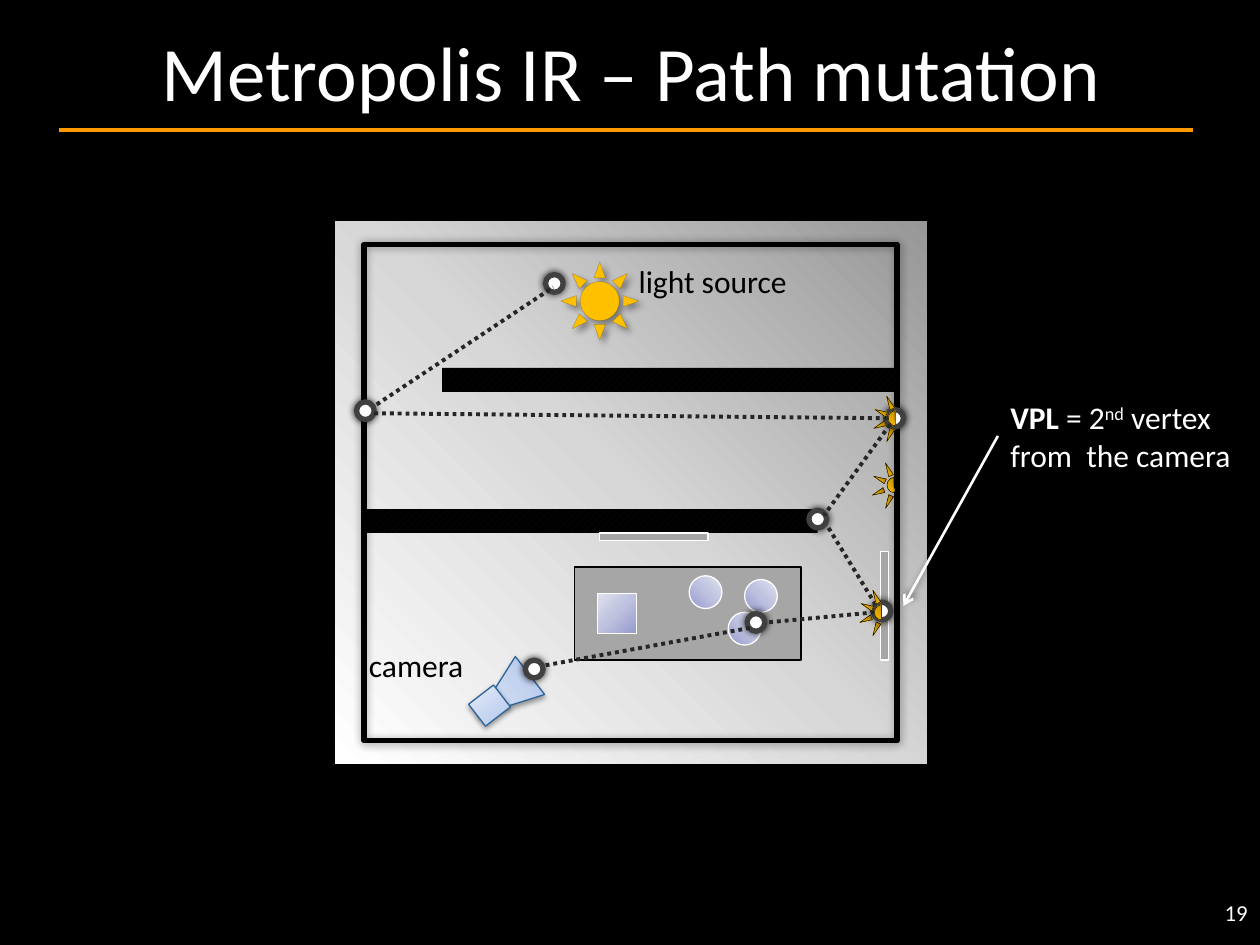
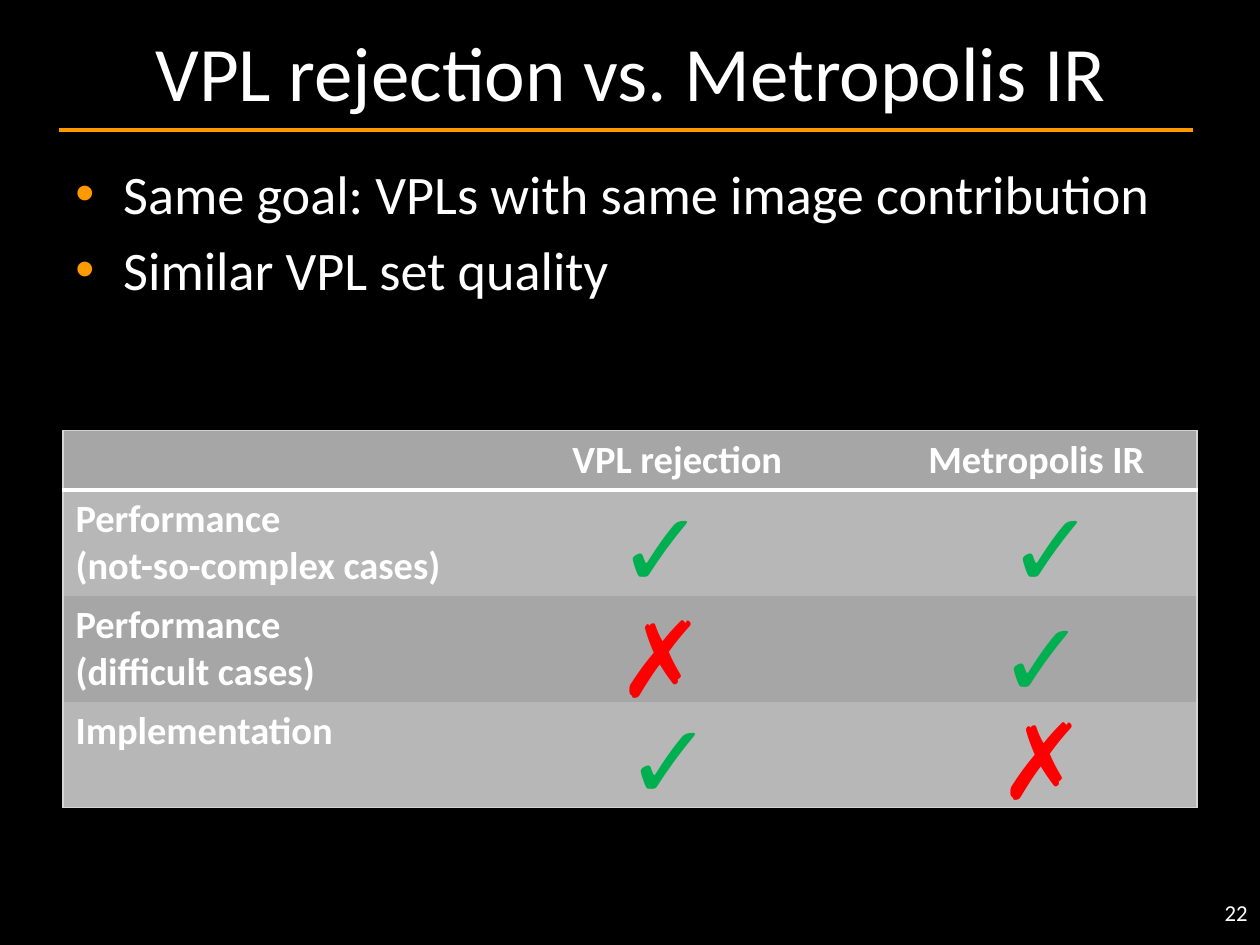
from dataclasses import dataclass
from typing import Optional

from lxml import etree
from pptx import Presentation
from pptx.dml.color import RGBColor
from pptx.enum.dml import MSO_LINE, MSO_PATTERN
from pptx.enum.shapes import MSO_CONNECTOR, MSO_SHAPE
from pptx.enum.text import MSO_ANCHOR, PP_ALIGN
from pptx.oxml.ns import qn
from pptx.util import Inches, Pt

BLACK, WHITE, ORANGE = "000000", "FFFFFF", "FF9900"
DARK, GREY, EDGE, BAND = "262626", "A6A6A6", "D5D5D5", "B7B7B7"
GREEN, RED = "00B050", "FF0000"


@dataclass
class Gradient:
    stops: tuple
    angle: int = 0
    focus: Optional[tuple] = None


@dataclass
class Shadow:
    alpha: int
    blur: float
    dist: float = 0
    angle: int = 0


LILAC = ((0, "959ACF"), (50, "BFC2DF"), (100, "E0E1EF"))
ROOM = Gradient(((0, "979797"), (50, "D7D7D7"), (100, WHITE)), 135)
CAMERA = Gradient(((0, "A9C0E9"), (35, "C4D3EF"), (100, "E8EEFA")), 270)
BALL = Gradient(LILAC, 315)
BOX = Gradient(LILAC, focus=(100, 100, 0, 0))
GLOW = Gradient(((0, "977200"), (50, "D7A200"), (100, "FFC000")), focus=(100, 0, 0, 100))


def rgb(color):
    return RGBColor.from_string(color)


def add(parent, tag, **attrs):
    return etree.SubElement(parent, qn(tag), {k: str(v) for k, v in attrs.items()})


def add_color(parent, color, alpha=100):
    clr = add(parent, "a:srgbClr", val=color)
    if alpha < 100:
        add(clr, "a:alpha", val=alpha * 1000)


def paint(sp, fill):
    if fill is None:
        sp.fill.background()
    elif isinstance(fill, str):
        sp.fill.solid()
        sp.fill.fore_color.rgb = rgb(fill)
    elif isinstance(fill, tuple):
        sp.fill.patterned()
        sp.fill.pattern = MSO_PATTERN.WIDE_UPWARD_DIAGONAL
        sp.fill.fore_color.rgb, sp.fill.back_color.rgb = map(rgb, fill)
    else:
        sp.fill.gradient()
        grad = sp._element.spPr.find(qn("a:gradFill"))
        for child in list(grad):
            grad.remove(child)
        stops = add(grad, "a:gsLst")
        for pos, color in fill.stops:
            add_color(add(stops, "a:gs", pos=pos * 1000), color)
        if fill.focus:
            way = add(grad, "a:path", path="circle")
            add(way, "a:fillToRect", **{k: v * 1000 for k, v in zip("ltrb", fill.focus)})
        else:
            add(grad, "a:lin", ang=fill.angle * 60000, scaled=0)


def cast(effects, shadow):
    if shadow:
        outer = add(effects, "a:outerShdw", blurRad=Pt(shadow.blur), dist=Pt(shadow.dist),
                    dir=shadow.angle * 60000, algn="ctr", rotWithShape=0)
        add_color(outer, BLACK, shadow.alpha)


def write(p, text, size=18, color=WHITE, font="Calibri", bold=False, base=0, align=None):
    if align is not None:
        p.alignment = align
    for i, line in enumerate(text.split("\n")):
        if i:
            p.add_line_break()
        r = p.add_run()
        r.text = line
        r.font.name, r.font.size, r.font.bold = font, Pt(size), bold
        r.font.color.rgb = rgb(color)
        if base:
            r.font._element.set("baseline", str(base * 1000))


def set_borders(cell, sides):
    tcPr = cell._tc.get_or_add_tcPr()
    for i, side in enumerate("LRTB"):
        color, width = sides.get(side, (None, 0))
        ln = etree.Element(qn(f"a:ln{side}"), w=str(Pt(width)))
        if color:
            add_color(add(ln, "a:solidFill"), color)
        else:
            add(ln, "a:noFill")
        tcPr.insert(i, ln)


class Deck:
    def __init__(self):
        self.prs = Presentation()
        self.prs.slide_width, self.prs.slide_height = Inches(10), Inches(7.5)
        fill = self.prs.slide_master.background.fill
        fill.solid()
        fill.fore_color.rgb = rgb(BLACK)

    def slide(self, title, number):
        self.s = self.prs.slides.add_slide(self.prs.slide_layouts[5])
        self.line((0.47, 1.03), (9.47, 1.03), ORANGE)
        sp = self.s.shapes.title
        sp.left, sp.top, sp.width, sp.height = map(Inches, (0.56, 0.09, 8.9, 0.94))
        sp.text_frame.vertical_anchor = MSO_ANCHOR.MIDDLE
        write(sp.text_frame.paragraphs[0], title, size=44, align=PP_ALIGN.CENTER)
        self.text(number, 7.67, 7.08, 2.33, 0.42, wrap=True, size=13, align=PP_ALIGN.RIGHT)

    def shape(self, kind, x, y, w, h, fill=None, line=BLACK, width=0.75, rot=0,
              shadow=None, line_alpha=100):
        sp = self.s.shapes.add_shape(kind, *map(Inches, (x, y, w, h)))
        sp.rotation = rot
        paint(sp, fill)
        sp.line.color.rgb, sp.line.width = rgb(line), Pt(width)
        if line_alpha < 100:
            add(sp.line._ln.find(".//" + qn("a:srgbClr")), "a:alpha", val=line_alpha * 1000)
        sp.shadow.inherit = False
        cast(sp._element.spPr.find(qn("a:effectLst")), shadow)
        return sp

    def line(self, start, end, color=DARK, width=2.25, dash=None, arrow=False, shadow=None):
        cx = self.s.shapes.add_connector(MSO_CONNECTOR.STRAIGHT, *map(Inches, start + end))
        cx.line.color.rgb, cx.line.width = rgb(color), Pt(width)
        if dash:
            cx.line.dash_style = dash
        if arrow:
            add(cx.line._ln, "a:tailEnd", type="arrow")
        cast(add(cx._element.spPr, "a:effectLst"), shadow)

    def text(self, runs, x, y, w, h, wrap=False, **fmt):
        tf = self.s.shapes.add_textbox(*map(Inches, (x, y, w, h))).text_frame
        tf.word_wrap = wrap
        for text, extra in [(runs, {})] if isinstance(runs, str) else runs:
            write(tf.paragraphs[0], text, **fmt, **extra)

    def bullets(self, items, x, y, w, h, size):
        tf = self.s.shapes.add_textbox(*map(Inches, (x, y, w, h))).text_frame
        tf.word_wrap = True
        for i, item in enumerate(items):
            p = tf.add_paragraph() if i else tf.paragraphs[0]
            p.space_before = Pt(size * 0.2)
            pPr = p._p.get_or_add_pPr()
            pPr.set("marL", str(Inches(0.38)))
            pPr.set("indent", str(-Inches(0.38)))
            add_color(add(pPr, "a:buClr"), ORANGE)
            add(pPr, "a:buFont", typeface="Arial")
            add(pPr, "a:buChar", char="•")
            write(p, item, size=size)

    def table(self, rows, x, y, widths, heights):
        frame = self.s.shapes.add_table(len(rows), len(widths), Inches(x), Inches(y),
                                        Inches(sum(widths)), Inches(sum(heights)))
        table = frame.table
        table.horz_banding = False
        for col, width in zip(table.columns, widths):
            col.width = Inches(width)
        for i, (row, height) in enumerate(zip(rows, heights)):
            table.rows[i].height = Inches(height)
            for j, text in enumerate(row):
                cell = table.cell(i, j)
                cell.fill.solid()
                cell.fill.fore_color.rgb = rgb(BAND if i % 2 else GREY)
                outer = {"L": j == 0, "R": j == len(widths) - 1,
                         "T": i == 0, "B": i == len(rows) - 1}
                sides = {side: (EDGE, 0.75) for side, on in outer.items() if on}
                if i < 2:
                    sides["T" if i else "B"] = (WHITE, 3)
                set_borders(cell, sides)
                if text:
                    write(cell.text_frame.paragraphs[0], text, size=22, bold=True,
                          align=PP_ALIGN.LEFT if i else PP_ALIGN.CENTER)

    def vertex(self, x, y):
        self.shape(MSO_SHAPE.OVAL, x, y, 0.14, 0.14, WHITE, "404040", 3,
                   shadow=Shadow(80, 4, 0, 129))

    def path_line(self, start, end):
        self.line(start, end, dash=MSO_LINE.ROUND_DOT)

    def vpl(self, x, y):
        pie = self.shape(MSO_SHAPE.PIE, x, y, 0.11, 0.12, GLOW, width=0.25)
        pie.adjustments[0], pie.adjustments[1] = 53.58, 162
        rays = ((-0.01, -0.12, 0.11, 336.1), (-0.08, -0.04, 0.1, 293.8),
                (-0.09, 0.07, 0.1, 246.2), (-0.01, 0.14, 0.11, 203.9))
        for dx, dy, h, rot in rays:
            self.shape(MSO_SHAPE.ISOSCELES_TRIANGLE, x + dx, y + dy, 0.04, h, GLOW,
                       width=0.25, rot=rot)


def draw_room(d):
    rect = MSO_SHAPE.RECTANGLE
    wall = ("0D0D0D", BLACK)
    soft = Shadow(38, 3.1, 1.6, 90)
    d.shape(rect, 2.65, 1.75, 4.71, 4.32, ROOM)
    d.shape(rect, 2.89, 1.94, 4.23, 3.94, width=3, shadow=Shadow(40, 5))
    for x, y in ((2.89, 4.04), (3.51, 2.92)):
        d.shape(rect, x, y, 3.6, 0.19, wall).line.fill.background()
    d.shape(MSO_SHAPE.ISOSCELES_TRIANGLE, 3.81, 5.26, 0.38, 0.52, CAMERA, "2F6498",
            rot=232.4, shadow=soft)
    d.shape(rect, 3.76, 5.49, 0.25, 0.22, CAMERA, "2F6498", rot=322.3, shadow=soft)
    d.shape(MSO_SHAPE.SUN, 4.45, 2.08, 0.62, 0.62, "FFC000", width=0.25,
            shadow=Shadow(40, 4, 3, 45), line_alpha=24)
    d.shape(rect, 4.56, 4.5, 1.8, 0.74, GREY, width=1)
    for x, y, rot in ((4.76, 4.23, 0), (6.59, 4.78, 90)):
        d.shape(rect, x, y, 0.86, 0.06, GREY, WHITE, rot=rot)
    d.shape(rect, 4.74, 4.71, 0.31, 0.32, BOX, WHITE)
    for x, y in ((5.91, 4.6), (5.78, 4.86), (5.47, 4.57)):
        d.shape(MSO_SHAPE.OVAL, x, y, 0.26, 0.26, BALL, WHITE)
    d.text("light source", 4.97, 2.03, 1.63, 0.47, color=BLACK)
    d.text("camera", 2.83, 5.08, 1.13, 0.47, color=BLACK)


def mutation_slide(d):
    d.slide("Metropolis IR – Path mutation", "19")
    draw_room(d)
    for x, y in ((4.33, 2.18), (2.83, 3.19), (7.03, 3.25), (6.42, 4.05), (4.17, 5.24),
                 (6.93, 4.78)):
        d.vertex(x, y)
    for start, end in (((2.99, 3.21), (4.39, 2.28)), ((7.1, 3.32), (6.54, 4.09)),
                       ((2.97, 3.28), (7.07, 3.32)), ((6.95, 4.8), (6.57, 4.18))):
        d.path_line(start, end)
    for x, y in ((7.04, 3.79), (7.05, 3.26), (6.94, 4.8)):
        d.vpl(x, y)
    d.text([("VPL", {"bold": True}), (" = 2", {}), ("nd", {"base": 30}),
            (" vertex \nfrom  the camera", {})], 7.92, 3.11, 1.99, 0.71)
    d.line((7.92, 3.46), (7.17, 4.81), WHITE, 1.5, arrow=True, shadow=Shadow(40, 4, 3, 315))
    d.vertex(5.93, 4.87)
    d.path_line((4.33, 5.28), (5.97, 4.98))
    d.path_line((6.94, 4.86), (6.09, 4.94))


def comparison_slide(d):
    d.slide("VPL rejection vs. Metropolis IR", "22")
    d.bullets(["Same goal: VPLs with same image contribution", "Similar VPL set quality"],
              0.5, 1.22, 9, 5.48, 31)
    d.table([["", "VPL rejection", "Metropolis IR"],
             ["Performance\n(not-so-complex cases)", "", ""],
             ["Performance \n(difficult cases)", "", ""],
             ["Implementation", "", ""]],
            0.5, 3.42, (3.3, 3.15, 2.55), (0.47, 0.84, 0.84, 0.84))
    for mark, x, y in (("✓", 7.9, 3.78), ("✓", 4.8, 3.78), ("✓", 4.87, 5.46),
                       ("✗", 4.8, 4.65), ("✓", 7.83, 4.65), ("✗", 7.83, 5.46)):
        good = mark == "✓"
        d.text(mark, x, y, 0.86 if good else 0.74, 1.11, size=60, font="Arial",
               color=GREEN if good else RED)


def main():
    d = Deck()
    mutation_slide(d)
    comparison_slide(d)
    d.prs.save("out.pptx")


if __name__ == "__main__":
    main()
